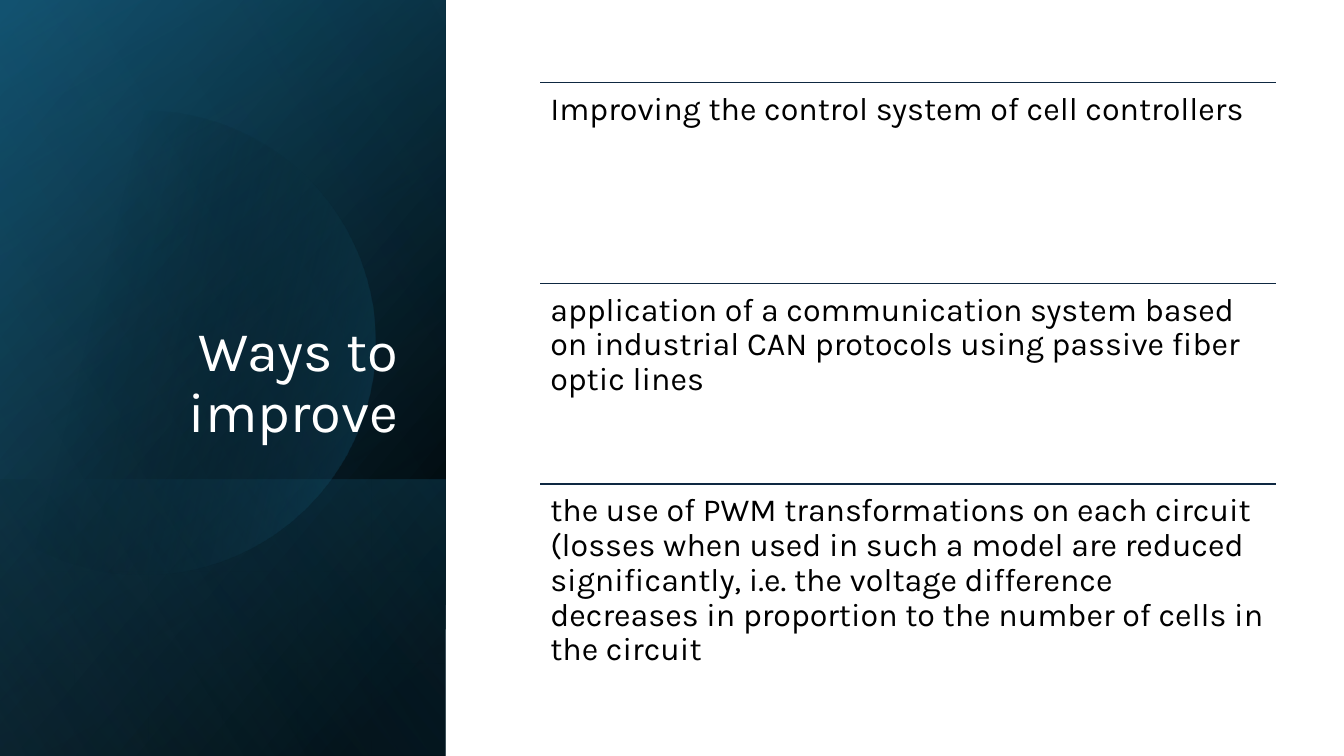
from math import cos, radians, sin

from lxml.etree import SubElement
from pptx import Presentation
from pptx.dml.color import RGBColor
from pptx.enum.shapes import MSO_CONNECTOR, MSO_SHAPE
from pptx.enum.text import MSO_ANCHOR, PP_ALIGN
from pptx.oxml.ns import qn
from pptx.util import Inches, Pt

FONT = "Karla"
BLACK, WHITE, NAVY = "000000", "FFFFFF", "0E2841"
TEAL, SKY = "156082", "46B1E1"
PANEL_WIDTH, SLIDE_HEIGHT = 4.42, 7.5
LIST_LEFT, LIST_TOP, LIST_WIDTH, ROW_HEIGHT = 5.36, 0.82, 7.3, 1.99

IMPROVEMENTS = [
    "Improving the control system of cell controllers",
    "application of a communication system based on industrial CAN protocols "
    "using passive fiber optic lines",
    "the use of PWM transformations on each circuit (losses when used in such "
    "a model are reduced significantly, i.e. the voltage difference decreases "
    "in proportion to the number of cells in the circuit",
]


def color(hex_value):
    return RGBColor.from_string(hex_value)


def fill_gradient(shape, stops, angle):
    """Fill with (position %, colour, opacity %) stops, angle clockwise in degrees."""
    shape.shadow.inherit = False
    shape.line.fill.background()
    shape.fill.gradient()
    gradient = shape._element.spPr.find(qn("a:gradFill"))
    for child in list(gradient):
        gradient.remove(child)
    stop_list = SubElement(gradient, qn("a:gsLst"))
    for position, hex_value, opacity in stops:
        stop = SubElement(stop_list, qn("a:gs"), pos=str(position * 1000))
        tint = SubElement(stop, qn("a:srgbClr"), val=hex_value)
        SubElement(tint, qn("a:alpha"), val=str(opacity * 1000))
    SubElement(gradient, qn("a:lin"), ang=str(angle * 60000), scaled="0")


def add_panel(slide, top, stops, angle):
    """Add a turned, mirrored panel that reaches from top to the slide's lower edge."""
    length = SLIDE_HEIGHT - top
    panel = slide.shapes.add_shape(
        MSO_SHAPE.RECTANGLE,
        Inches((PANEL_WIDTH - length) / 2),
        Inches(top + (length - PANEL_WIDTH) / 2),
        Inches(length),
        Inches(PANEL_WIDTH),
    )
    panel.rotation = 90
    panel._element.spPr.xfrm.set("flipH", "1")
    fill_gradient(panel, stops, angle)


def add_cut_circle(slide, center_x, center_y, radius, stops, angle):
    """Add a circle cut off at about the slide's left edge."""
    points = [
        (Inches(center_x + radius * cos(radians(turn))),
         Inches(center_y + radius * sin(radians(turn))))
        for turn in range(-128, 129, 2)
    ]
    builder = slide.shapes.build_freeform(*points[0])
    builder.add_line_segments(points[1:], close=True)
    fill_gradient(builder.convert_to_shape(), stops, angle)


def format_paragraph(paragraph, size, hex_value):
    paragraph.line_spacing = 0.9
    paragraph.font.name = FONT
    paragraph.font.size = Pt(size)
    paragraph.font.color.rgb = color(hex_value)


def set_title(slide, text):
    title = slide.shapes.title
    title.left, title.top = Inches(0.64), Inches(1.84)
    title.width, title.height = Inches(3.41), Inches(2.62)
    title.text_frame.text = text
    title.text_frame.word_wrap = True
    title.text_frame.vertical_anchor = MSO_ANCHOR.BOTTOM
    paragraph = title.text_frame.paragraphs[0]
    paragraph.alignment = PP_ALIGN.RIGHT
    format_paragraph(paragraph, 40, WHITE)


def add_rule(slide, top):
    rule = slide.shapes.add_connector(
        MSO_CONNECTOR.STRAIGHT, Inches(LIST_LEFT), Inches(top),
        Inches(LIST_LEFT + LIST_WIDTH), Inches(top))
    rule.line.color.rgb = color(NAVY)
    rule.line.width = Pt(1)
    SubElement(rule._element.spPr, qn("a:effectLst"))


def add_improvement(slide, top, text):
    add_rule(slide, top)
    box = slide.shapes.add_textbox(
        Inches(LIST_LEFT), Inches(top), Inches(LIST_WIDTH), Inches(ROW_HEIGHT))
    frame = box.text_frame
    frame.word_wrap = True
    frame.margin_left = frame.margin_right = Inches(0.1)
    frame.margin_top = frame.margin_bottom = Inches(0.1)
    frame.text = text
    format_paragraph(frame.paragraphs[0], 23, BLACK)


def main():
    presentation = Presentation()
    presentation.slide_width = Inches(13.33)
    presentation.slide_height = Inches(SLIDE_HEIGHT)
    slide = presentation.slides.add_slide(presentation.slide_layouts[5])

    add_panel(slide, 0, [(8, BLACK, 100), (100, "104862", 100)], 50)
    add_panel(slide, 0, [(0, BLACK, 0), (99, TEAL, 46)], 30)
    add_panel(slide, 4.76, [(2, TEAL, 29), (100, BLACK, 30)], 130)
    add_cut_circle(slide, 1.42, 3.4, 2.3, [(29, BLACK, 0), (100, TEAL, 43)], 14)
    add_panel(slide, 0, [(0, BLACK, 0), (99, SKY, 11)], 120)

    set_title(slide, "Ways to improve")
    title_element = slide.shapes.title._element
    slide.shapes._spTree.append(title_element)  # bring in front of the panels

    for row, text in enumerate(IMPROVEMENTS):
        add_improvement(slide, LIST_TOP + row * ROW_HEIGHT, text)

    presentation.save("out.pptx")


if __name__ == "__main__":
    main()
